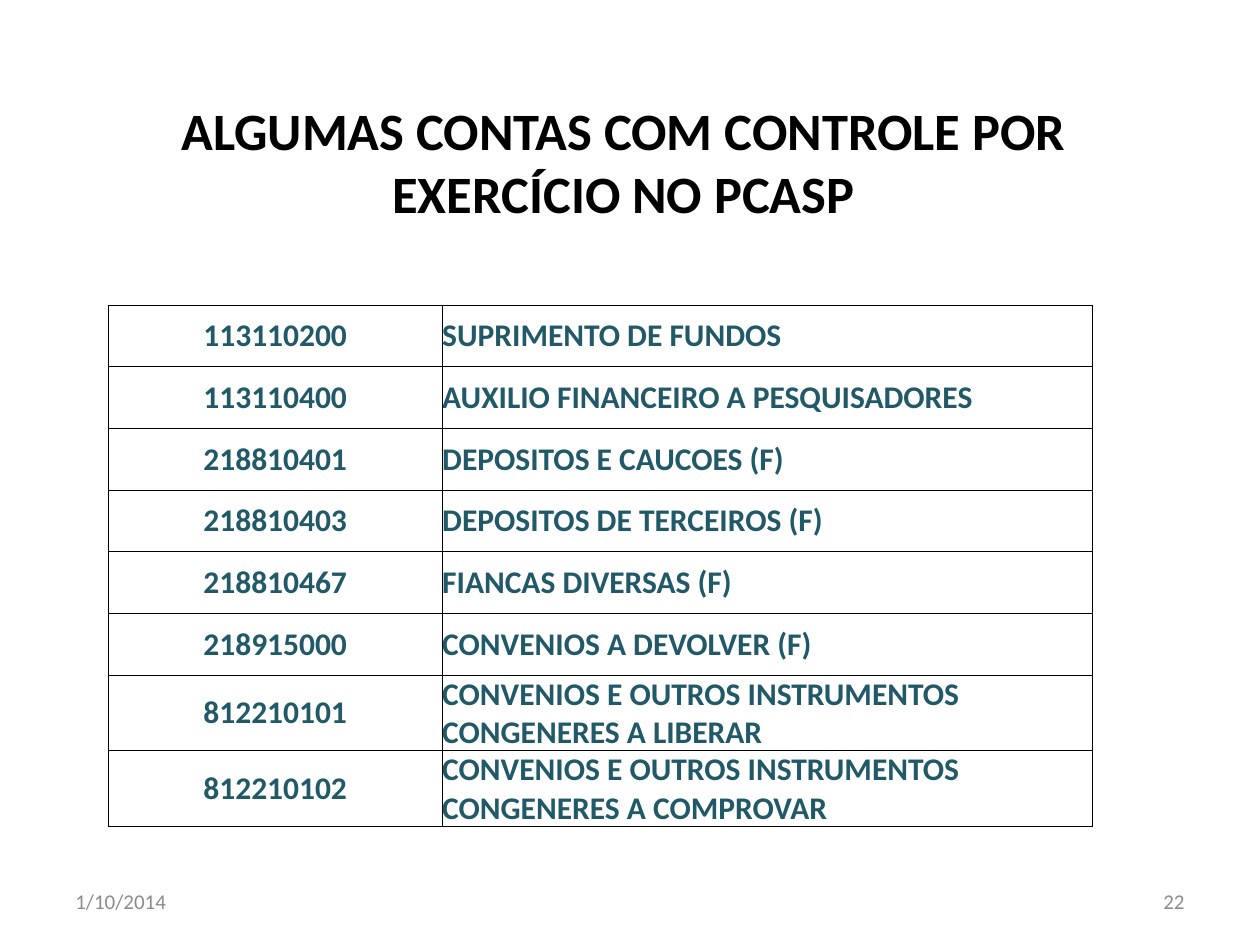
from lxml.etree import SubElement
from pptx import Presentation
from pptx.dml.color import RGBColor
from pptx.enum.text import MSO_ANCHOR, PP_ALIGN
from pptx.oxml.ns import qn
from pptx.util import Inches, Pt

# Content
TITLE = "ALGUMAS CONTAS COM CONTROLE POR EXERCÍCIO NO PCASP"
ACCOUNTS = [
    ("113110200", "SUPRIMENTO DE FUNDOS"),
    ("113110400", "AUXILIO FINANCEIRO A PESQUISADORES"),
    ("218810401", "DEPOSITOS E CAUCOES (F)"),
    ("218810403", "DEPOSITOS DE TERCEIROS (F)"),
    ("218810467", "FIANCAS DIVERSAS (F)"),
    ("218915000", "CONVENIOS A DEVOLVER (F)"),
    ("812210101", "CONVENIOS E OUTROS INSTRUMENTOS CONGENERES A LIBERAR"),
    ("812210102", "CONVENIOS E OUTROS INSTRUMENTOS CONGENERES A COMPROVAR"),
]
FOOTERS = [  # text, left edge, alignment
    ("1/10/2014", 0.5, PP_ALIGN.LEFT),
    ("22", 7.17, PP_ALIGN.RIGHT),
]
COLUMNS = [(2.65, PP_ALIGN.CENTER), (5.16, PP_ALIGN.LEFT)]
ROW_HEIGHT = 0.49
BLACK, TEAL, GREY = "000000", "215968", "8C8C8C"


def write(frame, text, size, color, align, bold=False):
    frame.text = text
    frame.word_wrap = True
    frame.vertical_anchor = MSO_ANCHOR.MIDDLE
    paragraph = frame.paragraphs[0]
    paragraph.alignment = align
    font = paragraph.font
    font.name, font.size, font.bold = "Calibri", Pt(size), bold
    font.color.rgb = RGBColor.from_string(color)


def add_borders(cell, color, width):
    properties = cell._tc.get_or_add_tcPr()
    for side in ("lnL", "lnR", "lnT", "lnB"):
        line = SubElement(properties, qn(f"a:{side}"), w=str(Pt(width)))
        fill = SubElement(line, qn("a:solidFill"))
        SubElement(fill, qn("a:srgbClr"), val=color)


prs = Presentation()
prs.slide_width, prs.slide_height = Inches(10), Inches(7.5)
slide = prs.slides.add_slide(prs.slide_layouts[5])

# Title
title = slide.shapes.title
title.left, title.top = Inches(0.7), Inches(0.47)
title.width, title.height = Inches(8.5), Inches(1.61)
write(title.text_frame, TITLE, 30, BLACK, PP_ALIGN.CENTER, bold=True)

# Date and slide number
for text, left, align in FOOTERS:
    footer = slide.shapes.add_textbox(Inches(left), Inches(6.95), Inches(2.33), Inches(0.4))
    write(footer.text_frame, text, 12, GREY, align)

# Accounts table
accounts = slide.shapes.add_table(
    len(ACCOUNTS), len(COLUMNS), Inches(0.86), Inches(2.42),
    Inches(sum(width for width, _ in COLUMNS)), Inches(ROW_HEIGHT * len(ACCOUNTS)),
).table
accounts.first_row = accounts.horz_banding = False
for column, (width, _) in zip(accounts.columns, COLUMNS):
    column.width = Inches(width)
for row, account in zip(accounts.rows, ACCOUNTS):
    row.height = Inches(ROW_HEIGHT)
    for cell, text, (_, align) in zip(row.cells, account, COLUMNS):
        write(cell.text_frame, text, 18, TEAL, align, bold=True)
        cell.vertical_anchor = MSO_ANCHOR.MIDDLE
        cell.margin_left = cell.margin_right = cell.margin_top = cell.margin_bottom = 0
        add_borders(cell, BLACK, 0.5)
        cell.fill.background()

prs.save("out.pptx")
